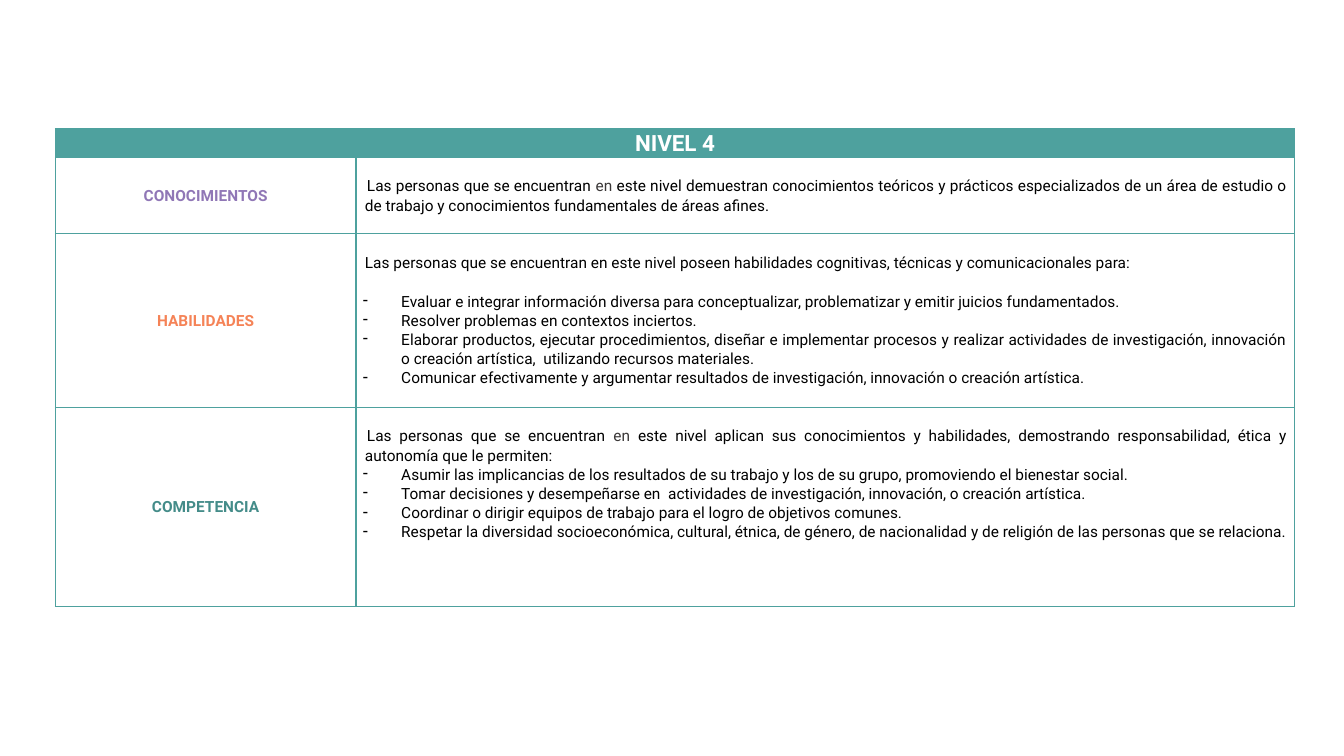
from dataclasses import dataclass
from lxml.etree import SubElement
from pptx import Presentation
from pptx.dml.color import RGBColor
from pptx.enum.text import MSO_ANCHOR, PP_ALIGN
from pptx.oxml.ns import qn
from pptx.util import Inches, Pt


@dataclass
class Theme:
    font: str = "Roboto"
    teal: str = "4EA19E"
    white: str = "FFFFFF"
    black: str = "000000"
    gray: str = "3B3838"
    purple: str = "9077B6"
    orange: str = "F58357"
    green: str = "448C89"
    title: int = 16
    body: int = 11


theme = Theme()


def write(par, text, size=theme.body, color=theme.black, bold=False,
          align=PP_ALIGN.JUSTIFY, left=0, first=0, after=0, dash=False):
    """Fill a paragraph; text between bars is gray."""
    par.alignment = align
    par.line_spacing = 1.07
    par.space_after = Pt(after)
    props = par._p.get_or_add_pPr()
    props.set("marL", str(Inches(left)))
    props.set("indent", str(Inches(first)))
    if dash:
        SubElement(props, qn("a:buChar")).set("char", "-")
    for i, part in enumerate(text.split("|")):
        run = par.add_run()
        run.text = part
        run.font.name = theme.font
        run.font.size = Pt(size)
        run.font.bold = bold
        run.font.color.rgb = RGBColor.from_string(theme.gray if i % 2 else color)


def frame(cell):
    """Draw thin teal borders on all four sides."""
    props = cell._tc.get_or_add_tcPr()
    for side in ("lnL", "lnR", "lnT", "lnB"):
        line = SubElement(props, qn("a:" + side), w=str(Pt(1)))
        fill = SubElement(line, qn("a:solidFill"))
        SubElement(fill, qn("a:srgbClr"), val=theme.teal)


# Label, color, intro, intro indent, gap after intro, list items
levels = [
    ("CONOCIMIENTOS", theme.purple,
     "Las personas que se encuentran |en |este nivel demuestran conocimientos teóricos y prácticos "
     "especializados de un área de estudio o de trabajo y conocimientos fundamentales de áreas afines.",
     0.02, 0, []),
    ("HABILIDADES", theme.orange,
     "Las personas que se encuentran en este nivel poseen habilidades cognitivas, técnicas y "
     "comunicacionales para:",
     0, 13.8, [
         "Evaluar e integrar información diversa para conceptualizar, problematizar y emitir juicios "
         "fundamentados.",
         "Resolver problemas en contextos inciertos.",
         "Elaborar productos, ejecutar procedimientos, diseñar e implementar procesos y realizar "
         "actividades de investigación, innovación o creación artística,  utilizando recursos materiales.",
         "Comunicar efectivamente y argumentar resultados de investigación, innovación o creación "
         "artística.",
     ]),
    ("COMPETENCIA", theme.green,
     "Las personas que se encuentran |en |este nivel aplican sus conocimientos y habilidades, "
     "demostrando responsabilidad, ética y autonomía que le permiten:",
     0.02, 0, [
         "Asumir las implicancias de los resultados de su trabajo y los de su grupo, promoviendo el "
         "bienestar social.",
         "Tomar decisiones y desempeñarse en  actividades de investigación, innovación, o creación "
         "artística.",
         "Coordinar o dirigir equipos de trabajo para el logro de objetivos comunes.",
         "Respetar la diversidad socioeconómica, cultural, étnica, de género, de nacionalidad y de "
         "religión de las personas que se relaciona.",
     ]),
]

# Slide
deck = Presentation()
deck.slide_width, deck.slide_height = Inches(13.33), Inches(7.5)
slide = deck.slides.add_slide(deck.slide_layouts[6])

# Table grid
widths = [2.98, 9.31]
heights = [0.28, 0.76, 1.72, 1.98]
table = slide.shapes.add_table(len(heights), len(widths), Inches(0.55), Inches(1.28),
                               Inches(sum(widths)), Inches(sum(heights))).table
table.first_row = table.horz_banding = False
for col, width in zip(table.columns, widths):
    col.width = Inches(width)
for row, height in zip(table.rows, heights):
    row.height = Inches(height)
for cell in table.iter_cells():
    frame(cell)
    cell.fill.background()
    cell.margin_left = cell.margin_right = Inches(0.05)
    cell.margin_top = cell.margin_bottom = 0

# Header
head = table.cell(0, 0)
head.merge(table.cell(0, 1))
head.fill.solid()
head.fill.fore_color.rgb = RGBColor.from_string(theme.teal)
write(head.text_frame.paragraphs[0], "NIVEL 4", size=theme.title, color=theme.white,
      bold=True, align=PP_ALIGN.CENTER)

# Level rows
for r, (label, color, intro, first, gap, items) in enumerate(levels, 1):
    name, body = table.cell(r, 0), table.cell(r, 1)
    name.vertical_anchor = MSO_ANCHOR.MIDDLE
    write(name.text_frame.paragraphs[0], label, color=color, bold=True, align=PP_ALIGN.CENTER)
    body.margin_left = body.margin_right = Inches(0.07)
    body.margin_top = Inches(0.19)
    write(body.text_frame.paragraphs[0], intro, left=0.02, first=first, after=gap)
    for item in items:
        write(body.text_frame.add_paragraph(), item, left=0.38, first=-0.38, dash=True)

deck.save("out.pptx")
